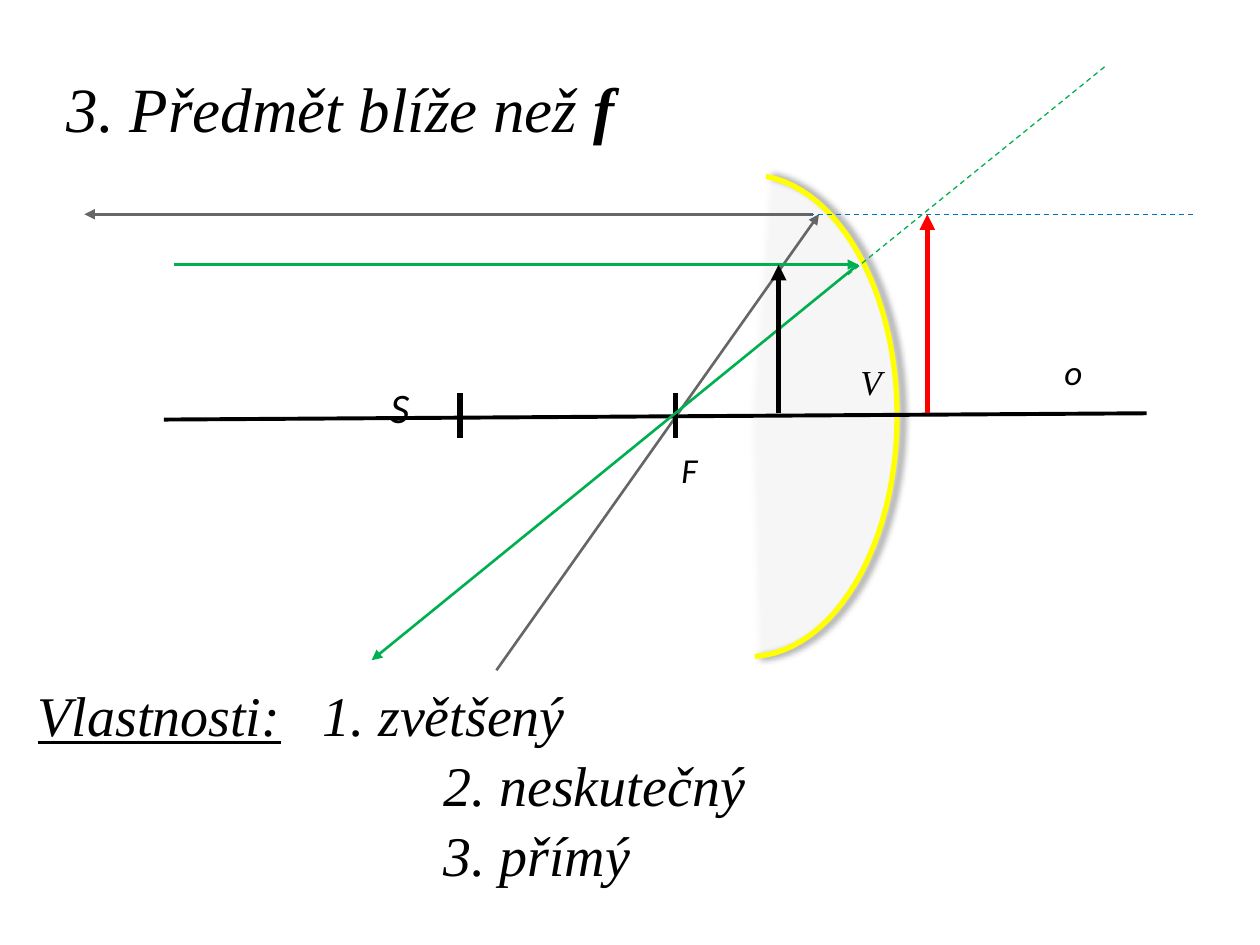
from dataclasses import dataclass

from lxml.etree import SubElement
from pptx import Presentation
from pptx.dml.color import RGBColor
from pptx.enum.dml import MSO_LINE
from pptx.enum.shapes import MSO_CONNECTOR
from pptx.enum.text import MSO_ANCHOR, MSO_AUTO_SIZE, PP_ALIGN
from pptx.oxml.ns import qn
from pptx.util import Inches, Pt


@dataclass(frozen=True)
class Theme:
    black: str = "000000"
    white: str = "FFFFFF"
    gray: str = "666666"
    green: str = "00B050"
    blue: str = "0070C0"
    red: str = "FF0000"
    yellow: str = "FFFF00"
    serif: str = "Times New Roman"
    sans: str = "Calibri"
    title: int = 36
    body: int = 32
    large: int = 24
    small: int = 20
    hairline: float = 0.75
    ray: float = 1.5
    axis: float = 2.25
    heavy: float = 3


THEME = Theme()

# Content
TITLE = [("3. Předmět blíže než ", False), ("f", True)]
HEADING = "Vlastnosti:"
PROPERTIES = ["1. zvětšený", "2. neskutečný", "3. přímý"]
FIRST_INDENT, NEXT_INDENT = 2.26, 3.22

# Optical layout in inches
IMAGE_Y, OBJECT_Y, AXIS_Y = 1.7, 2.1, 3.28
FOCUS_X, CENTER_X = 5.36, 3.65
MIRROR_HIT = (6.81, OBJECT_Y)
TICK_TOP, TICK_BOTTOM = 3.12, 3.48

# Mirror arc: start point, then Bezier segments (control, control, end)
MIRROR_START = (6.08, 1.4)
MIRROR_CURVES = [
    ((6.67, 1.51), (7.12, 2.33), (7.12, 3.3)),
    ((7.12, 4.33), (6.62, 5.17), (5.99, 5.21)),
]
MIRROR_BACK = (5.94, 3.3)

# (start, end, colour, width, style)
LINES = [
    ((1.3, 3.33), (9.1, AXIS_Y), THEME.black, THEME.axis, "plain"),
    ((6.45, IMAGE_Y), (0.67, IMAGE_Y), THEME.gray, THEME.ray, "arrow"),
    ((3.94, 5.32), (6.5, IMAGE_Y), THEME.gray, THEME.ray, "arrow"),
    *[((x, TICK_TOP), (x, TICK_BOTTOM), THEME.black, THEME.heavy, "plain")
      for x in (FOCUS_X, CENTER_X)],
    ((1.38, OBJECT_Y), MIRROR_HIT, THEME.green, THEME.ray, "arrow"),
    (MIRROR_HIT, (2.95, 5.24), THEME.green, THEME.ray, "arrow"),
    ((7.36, AXIS_Y), (7.36, IMAGE_Y), THEME.red, THEME.heavy, "arrow"),
    ((6.42, IMAGE_Y), (9.49, IMAGE_Y), THEME.blue, THEME.hairline, "dash"),
    ((6.73, 2.18), (8.78, 0.52), THEME.green, THEME.hairline, "dash"),
    ((6.18, AXIS_Y), (6.18, OBJECT_Y), THEME.black, THEME.heavy, "arrow"),
]

# (text, left, top, width, height, font, size)
LABELS = [
    ("o", 8.35, 2.73, 0.47, 0.5, THEME.sans, THEME.small),
    ("F", 5.31, 3.51, 0.51, 0.44, THEME.sans, THEME.small),
    ("S", 3.0, 2.98, 0.49, 0.5, THEME.sans, THEME.large),
    ("V", 6.73, 2.81, 0.39, 0.44, THEME.serif, THEME.small),
]


def color(value):
    return RGBColor.from_string(value)


def add_run(paragraph, text, font_name, size, bold=False, underline=False):
    run = paragraph.add_run()
    run.text = text
    font = run.font
    font.name, font.size = font_name, Pt(size)
    font.italic, font.bold, font.underline = True, bold, underline
    font.color.rgb = color(THEME.black)


def add_line(slide, start, end, line_color, width, style):
    points = [Inches(value) for value in (*start, *end)]
    connector = slide.shapes.add_connector(MSO_CONNECTOR.STRAIGHT, *points)
    connector.line.color.rgb = color(line_color)
    connector.line.width = Pt(width)
    if style == "dash":
        connector.line.dash_style = MSO_LINE.DASH
    if style == "arrow":
        SubElement(connector.line._get_or_add_ln(), qn("a:tailEnd"), type="triangle")
    SubElement(connector._element.spPr, qn("a:effectLst"))


def arc_points(steps=24):
    points = [MIRROR_START]
    for first, second, end in MIRROR_CURVES:
        start = points[-1]
        for step in range(1, steps + 1):
            t = step / steps
            weights = ((1 - t) ** 3, 3 * t * (1 - t) ** 2, 3 * t * t * (1 - t), t ** 3)
            points.append(tuple(
                sum(weight * value for weight, value in zip(weights, axis))
                for axis in zip(start, first, second, end)))
    return points


def add_outline(slide, points, close):
    first, *rest = [(Inches(x), Inches(y)) for x, y in points]
    builder = slide.shapes.build_freeform(*first)
    builder.add_line_segments(rest, close=close)
    shape = builder.convert_to_shape()
    effects = SubElement(shape._element.spPr, qn("a:effectLst"))
    shadow = SubElement(effects, qn("a:outerShdw"), blurRad=str(Pt(4)),
                        dist=str(Pt(3)), dir="0", algn="ctr", rotWithShape="0")
    shade = SubElement(shadow, qn("a:srgbClr"), val=THEME.black)
    SubElement(shade, qn("a:alpha"), val="40000")
    return shape


def add_mirror(slide):
    arc = arc_points()
    body = add_outline(slide, arc + [MIRROR_BACK], close=True)
    body.fill.solid()
    body.fill.fore_color.rgb = color(THEME.white)
    fill_color = body._element.spPr.find(qn("a:solidFill")).find(qn("a:srgbClr"))
    SubElement(fill_color, qn("a:alpha"), val="10000")
    body.line.fill.background()

    edge = add_outline(slide, arc, close=False)
    edge.fill.background()
    edge.line.color.rgb = color(THEME.yellow)
    edge.line.width = Pt(THEME.heavy)


def add_box(slide, left, top, width, height):
    box = slide.shapes.add_textbox(*map(Inches, (left, top, width, height)))
    box.text_frame.word_wrap = True
    return box.text_frame


def add_title(slide):
    title = slide.shapes.title
    title.left, title.top, title.width, title.height = map(Inches, (0.43, 0.39, 9.33, 0.92))
    frame = title.text_frame
    frame.auto_size = MSO_AUTO_SIZE.NONE
    frame.vertical_anchor = MSO_ANCHOR.MIDDLE
    paragraph = frame.paragraphs[0]
    paragraph.alignment = PP_ALIGN.LEFT
    for text, bold in TITLE:
        add_run(paragraph, text, THEME.serif, THEME.title, bold=bold)


def add_properties(slide):
    frame = add_box(slide, 0.2, 5.32, 7.48, 1.81)
    frame.vertical_anchor = MSO_ANCHOR.MIDDLE
    for index, text in enumerate(PROPERTIES):
        paragraph = frame.add_paragraph() if index else frame.paragraphs[0]
        paragraph.space_before = Pt(1.7)
        properties = paragraph._p.get_or_add_pPr()
        if index:
            properties.set("marL", str(Inches(NEXT_INDENT)))
            properties.set("indent", "0")
        else:
            stops = SubElement(properties, qn("a:tabLst"))
            SubElement(stops, qn("a:tab"), pos=str(Inches(FIRST_INDENT)), algn="l")
            add_run(paragraph, HEADING, THEME.serif, THEME.body, underline=True)
            text = "\t" + text
        add_run(paragraph, text, THEME.serif, THEME.body)


def main():
    presentation = Presentation()
    presentation.slide_width, presentation.slide_height = Inches(10), Inches(7.5)
    slide = presentation.slides.add_slide(presentation.slide_layouts[5])

    add_title(slide)
    add_mirror(slide)
    for line in LINES:
        add_line(slide, *line)
    for text, left, top, width, height, font_name, size in LABELS:
        frame = add_box(slide, left, top, width, height)
        add_run(frame.paragraphs[0], text, font_name, size)
    add_properties(slide)

    presentation.save("out.pptx")


if __name__ == "__main__":
    main()
